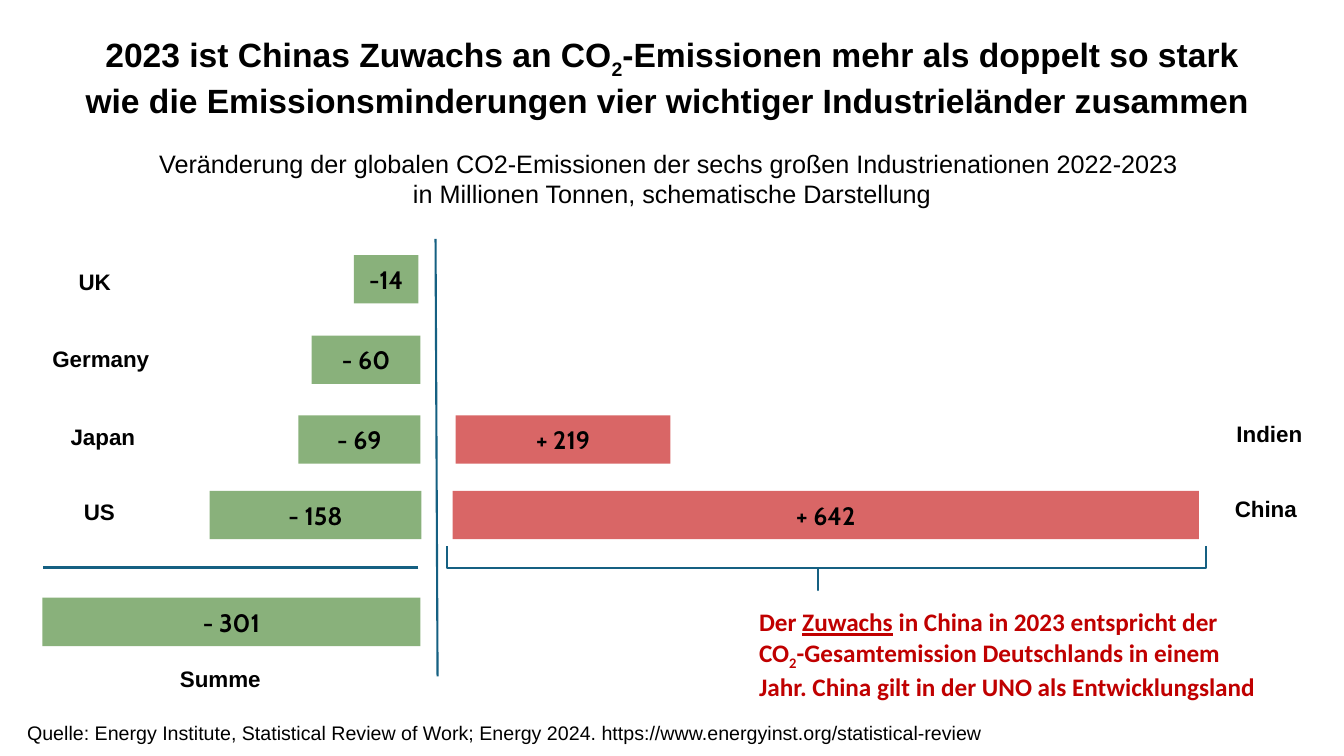
import pptx
import pptx.util
import pptx.dml.color
import pptx.enum.shapes
import pptx.enum.text
import pptx.oxml.ns
from lxml import etree

Inches = pptx.util.Inches
RGBColor = pptx.dml.color.RGBColor
SHAPE = pptx.enum.shapes.MSO_SHAPE
ALIGN = pptx.enum.text.PP_ALIGN
ANCHOR = pptx.enum.text.MSO_ANCHOR
qn = pptx.oxml.ns.qn

BLACK = RGBColor(0x00, 0x00, 0x00)
GREEN = RGBColor(0x3B, 0x7D, 0x23)
RED = RGBColor(0xC0, 0x00, 0x00)
BLUE = RGBColor(0x15, 0x60, 0x82)

TITLE = [[
    ("2023 ist Chinas Zuwachs an CO", ""),
    ("2", "sub"),
    ("-Emissionen mehr als doppelt so stark", ""),
    ("\n", ""),
    ("wie die Emissionsminderungen vier wichtiger Industrieländer zusammen ", ""),
]]
SUBTITLE = [[
    ("Veränderung der globalen CO2-Emissionen der sechs großen Industrienationen 2022-2023 ", ""),
    ("\n", ""),
    ("in Millionen Tonnen, schematische Darstellung", ""),
]]
SOURCE = [[
    ("Quelle: Energy Institute, Statistical Review of Work; Energy 2024. "
     "https://www.energyinst.org/statistical-review", ""),
]]
CALLOUT = [
    [("Der ", ""), ("Zuwachs", "underline"), (" in China in 2023 entspricht der", "")],
    [("CO", ""), ("2", "sub"),
     ("-Gesamtemission Deutschlands in einem Jahr. "
      "China gilt in der UNO als Entwicklungsland", "")],
]

BAR_H = 0.48
BARS = [
    ("-14", 3.51, 2.53, 0.64, GREEN),
    ("- 60", 3.09, 3.33, 1.08, GREEN),
    ("- 69", 2.96, 4.12, 1.21, GREEN),
    ("- 158", 2.08, 4.87, 2.1, GREEN),
    ("- 301", 0.42, 5.93, 3.75, GREEN),
    ("+ 219", 4.52, 4.12, 2.13, RED),
    ("+ 642", 4.49, 4.87, 7.4, RED),
]
LABEL_H = 0.37
LABELS = [
    ("UK", 0.44, 2.61, 1),
    ("Germany", 0.3, 3.37, 1.4),
    ("Japan", 0.32, 4.15, 1.4),
    ("US", 0.43, 4.89, 1.11),
    ("Summe", 1.55, 6.55, 1.27),
    ("Indien", 11.89, 4.12, 1.4),
    ("China", 12, 4.86, 1.11),
]
RULES = [(4.32, 2.37, 4.34, 6.71), (4.15, 5.63, 0.43, 5.63)]
BRACE = (7.98, 1.87, 0.44, 7.53)


def box(left, top, width, height):
    return [Inches(v) for v in (left, top, width, height)]


def write(shape, paragraphs, size, font="Arial", color=BLACK, bold=False,
          align=ALIGN.CENTER, anchor=ANCHOR.TOP):
    tf = shape.text_frame
    tf.word_wrap = True
    tf.auto_size = pptx.enum.text.MSO_AUTO_SIZE.NONE
    tf.vertical_anchor = anchor
    tf.margin_left = tf.margin_right = Inches(0.1)
    tf.margin_top = tf.margin_bottom = Inches(0.05)
    for i, runs in enumerate(paragraphs):
        p = tf.add_paragraph() if i else tf.paragraphs[0]
        p.alignment = align
        for text, style in runs:
            if text == "\n":
                p.add_line_break()
                continue
            r = p.add_run()
            r.text = text
            r.font.name = font
            r.font.size = pptx.util.Pt(size)
            r.font.bold = bold
            r.font.color.rgb = color
            if style == "underline":
                r.font.underline = True
            elif style == "sub":
                r.font._element.set("baseline", "-25000")


def stroke(shape):
    shape.line.color.rgb = BLUE
    shape.line.width = pptx.util.Pt(1.5)


def add_bar(s, text, left, top, width, color):
    bar = s.shapes.add_shape(SHAPE.RECTANGLE, *box(left, top, width, BAR_H))
    bar.shadow.inherit = False
    bar.fill.solid()
    bar.fill.fore_color.rgb = color
    clr = bar._element.spPr.find(qn("a:solidFill")).find(qn("a:srgbClr"))
    etree.SubElement(clr, qn("a:alpha")).set("val", "60000")
    bar.line.fill.background()
    write(bar, [[(text, "")]], 18, font="Cabin", bold=True, anchor=ANCHOR.MIDDLE)


def add_rule(s, x1, y1, x2, y2):
    rule = s.shapes.add_connector(pptx.enum.shapes.MSO_CONNECTOR.STRAIGHT,
                                  *box(x1, y1, x2, y2))
    stroke(rule)
    etree.SubElement(rule._element.spPr, qn("a:effectLst"))


def main():
    prs = pptx.Presentation()
    prs.slide_width, prs.slide_height = Inches(13.33), Inches(7.5)
    s = prs.slides.add_slide(prs.slide_layouts[5])

    title = s.shapes.title
    title.left, title.top, title.width, title.height = box(0, 0.29, 13.33, 0.91)
    write(title, TITLE, 24, bold=True)
    write(s.shapes.add_textbox(*box(0, 1.42, 13.33, 0.71)), SUBTITLE, 18)
    write(s.shapes.add_textbox(*box(0.17, 7.1, 10.24, 0.34)), SOURCE, 14,
          align=ALIGN.LEFT)

    for text, left, top, width in LABELS:
        label = s.shapes.add_textbox(*box(left, top, width, LABEL_H))
        write(label, [[(text, "")]], 16, bold=True)
    for bar in BARS:
        add_bar(s, *bar)
    for rule in RULES:
        add_rule(s, *rule)

    write(s.shapes.add_textbox(*box(7.43, 5.97, 5.24, 1.01)), CALLOUT, 18,
          font="Calibri", color=RED, bold=True, align=ALIGN.LEFT)
    brace = s.shapes.add_shape(SHAPE.RIGHT_BRACE, *box(*BRACE))
    brace.shadow.inherit = False
    brace.rotation = 90
    brace.adjustments[0] = 0
    brace.adjustments[1] = 0.512
    brace.fill.background()
    stroke(brace)

    prs.save("out.pptx")


if __name__ == "__main__":
    main()
